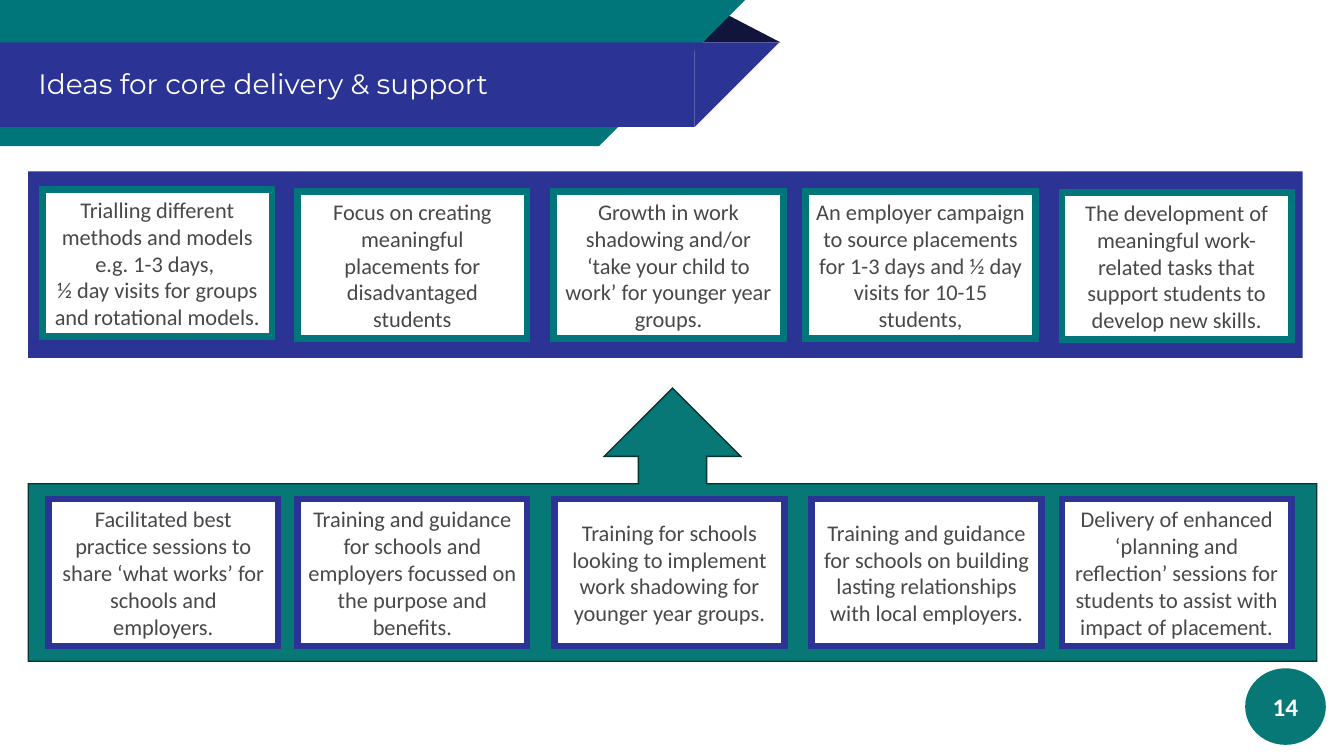
from lxml import etree
from pptx import Presentation
from pptx.dml.color import RGBColor
from pptx.enum.shapes import MSO_SHAPE
from pptx.enum.text import MSO_ANCHOR, PP_ALIGN
from pptx.oxml.ns import qn
from pptx.util import Inches, Pt

RECT = MSO_SHAPE.RECTANGLE
CORNER = MSO_SHAPE.RIGHT_TRIANGLE
PEAK = MSO_SHAPE.ISOSCELES_TRIANGLE
CALLOUT = MSO_SHAPE.UP_ARROW_CALLOUT
OVAL = MSO_SHAPE.OVAL
MIDDLE = MSO_ANCHOR.MIDDLE
CENTER = PP_ALIGN.CENTER
LEFT = PP_ALIGN.LEFT

WIDE, HIGH = 13.33, 7.5
CARD = (2.28, 1.46)
HUES = {
    "teal": "00767A", "sea": "077875", "blue": "2B3494", "navy": "11153B",
    "edge": "033533", "text": "484947", "white": "FFFFFF",
}
# Card places: left and top within their band
IDEAS = [
    (0.14, 0.18, "Trialling different methods and models e.g. 1-3 days, \v"
                 "½ day visits for groups and rotational models."),
    (2.67, 0.2, "Focus on creating meaningful placements for disadvantaged students"),
    (5.21, 0.2, "Growth in work shadowing and/or ‘take your child to work’ "
                "for younger year groups."),
    (7.71, 0.2, "An employer campaign to source placements for 1-3 days and "
                "½ day visits for 10-15 students,"),
    (10.25, 0.21, "The development of meaningful work-related tasks that "
                  "support students to develop new skills."),
]
SUPPORT = [
    (0.2, 1.1, "Facilitated best practice sessions to share ‘what works’ "
               "for schools and employers."),
    (2.67, 1.1, "Training and guidance for schools and employers focussed on "
                "the purpose and benefits."),
    (5.22, 1.1, "Training for schools looking to implement work shadowing "
                "for younger year groups."),
    (7.77, 1.1, "Training and guidance for schools on building lasting "
                "relationships with local employers."),
    (10.25, 1.1, "Delivery of enhanced ‘planning and reflection’ sessions for "
                 "students to assist with impact of placement."),
]


def hue(name):
    return RGBColor.from_string(HUES[name])


def draw(slide, kind, box, fill, line=None, width=1):
    shape = slide.shapes.add_shape(kind, *map(Inches, box))
    shape.shadow.inherit = False
    shape.fill.solid()
    shape.fill.fore_color.rgb = hue(fill)
    if line:
        shape.line.color.rgb = hue(line)
        shape.line.width = Pt(width)
        edge = shape.element.spPr.find(qn("a:ln"))
        etree.SubElement(edge, qn("a:miter"), lim="800000")
    else:
        shape.line.fill.background()
    return shape


def write(shape, text, size, color, face="Calibri", bold=False, align=CENTER):
    frame = shape.text_frame
    frame.text = text
    frame.word_wrap = True
    frame.vertical_anchor = MIDDLE
    para = frame.paragraphs[0]
    para.alignment = align
    for run in para.runs:
        run.font.size = Pt(size)
        run.font.name = face
        run.font.bold = bold
        run.font.color.rgb = hue(color)


def slant(slide, box, fill):
    """Draw a bar whose right end is cut at 45 degrees."""
    x, y, w, h = box
    draw(slide, RECT, (x, y, w - h, h), fill)
    draw(slide, CORNER, (x + w - h, y, h, h), fill).rotation = 90


def banner(slide, box, text):
    x, y, w, h = box
    fold = y + 0.42
    peak = draw(slide, PEAK, (x + w - 0.77, y + 0.15, 0.77, 0.27), "navy")
    peak.adjustments[0] = 0.324
    slant(slide, (x, y, w - 0.35, h), "teal")
    slant(slide, (x, fold, w - 0.01, 0.84), "blue")

    title = slide.shapes.title
    title.element.getparent().append(title.element)
    title.left, title.top = Inches(x + 0.28), Inches(fold + 0.01)
    title.width, title.height = Inches(6.36), Inches(0.84)
    write(title, text, 20, "white", "Montserrat", align=LEFT)
    frame = title.text_frame
    frame.margin_left = frame.margin_right = Inches(0.1)
    frame.margin_top = frame.margin_bottom = Inches(0.1)
    frame.paragraphs[0].line_spacing = 0.9


def band(slide, kind, box, fills, items, edge):
    """Draw a panel and its cards, placed from the panel's corner."""
    draw(slide, kind, box, *fills)
    x, y = box[:2]
    for left, top, text in items:
        card = draw(slide, RECT, (x + left, y + top, *CARD), "white", edge, 4.5)
        write(card, text, 16, "text")


def badge(slide, box, text):
    write(draw(slide, OVAL, box, "sea"), text, 18, "white", bold=True)


def main():
    deck = Presentation()
    deck.slide_width, deck.slide_height = Inches(WIDE), Inches(HIGH)
    slide = deck.slides.add_slide(deck.slide_layouts[5])
    banner(slide, (0, 0, 7.74, 1.45), "Ideas for core delivery & support")
    badge(slide, (12.35, 6.63, 0.8, 0.76), "14")
    band(slide, RECT, (0.28, 1.7, 12.64, 1.85), ["blue"], IDEAS, "teal")
    band(slide, CALLOUT, (0.28, 3.85, 12.78, 2.71), ["sea", "edge"], SUPPORT, "blue")
    deck.save("out.pptx")


if __name__ == "__main__":
    main()
